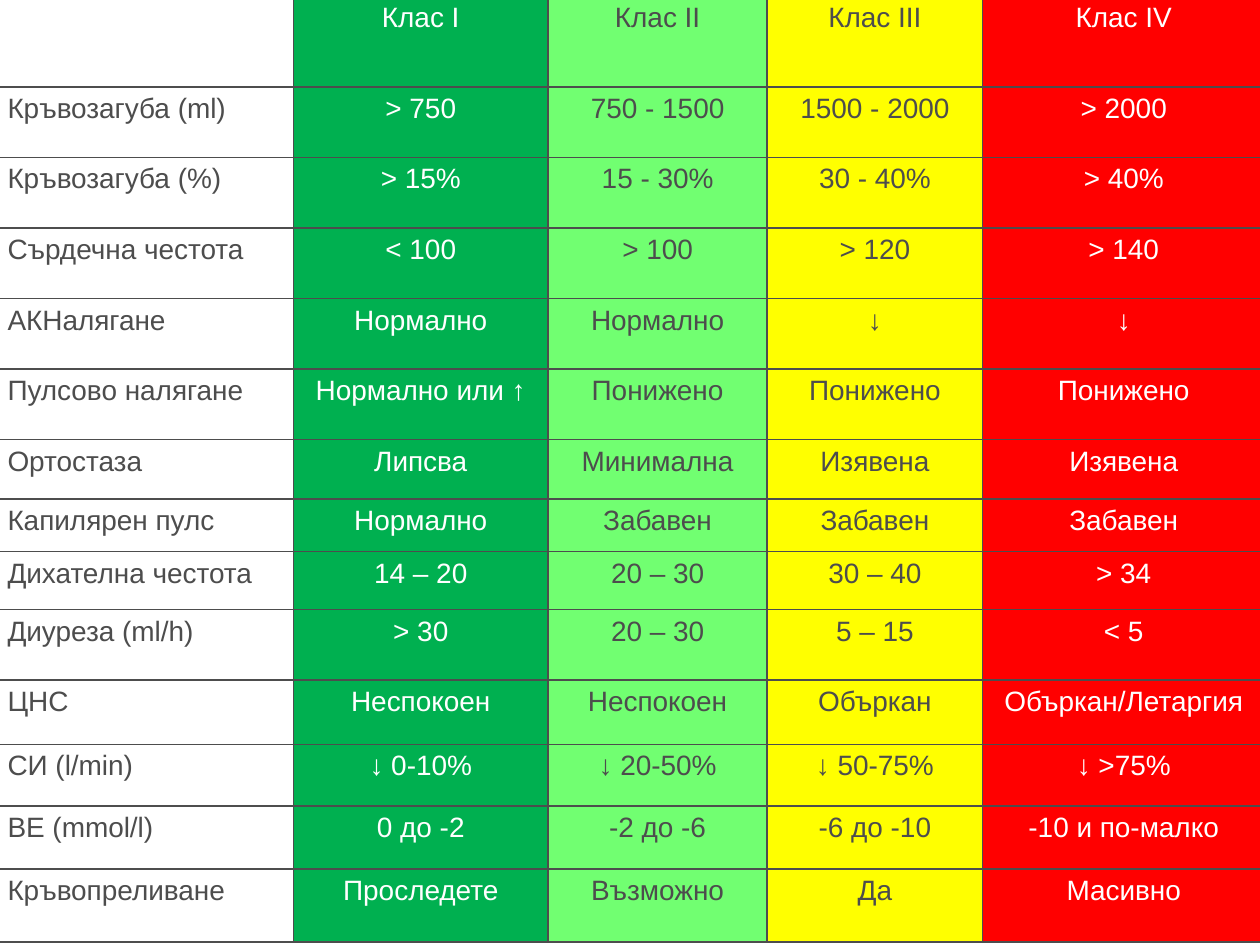
from lxml import etree
from pptx import Presentation
from pptx.dml.color import RGBColor
from pptx.enum import text
from pptx.oxml import ns
from pptx.util import Inches, Pt

GREY, WHITE = "4D4D4D", "FFFFFF"

# width, fill, font colour, alignment
COLUMNS = [
    (2.37, WHITE, GREY, text.PP_ALIGN.LEFT),
    (2.02, "00B050", WHITE, text.PP_ALIGN.CENTER),
    (1.74, "71FF71", GREY, text.PP_ALIGN.CENTER),
    (1.71, "FFFF00", GREY, text.PP_ALIGN.CENTER),
    (2.24, "FF0000", WHITE, text.PP_ALIGN.CENTER),
]

# height, then the indicator and its value in each class
ROWS = [
    (0.72, "", "Клас I", "Клас II", "Клас III", "Клас IV"),
    (0.56, "Кръвозагуба (ml)", "> 750", "750 - 1500", "1500 - 2000", "> 2000"),
    (0.56, "Кръвозагуба (%)", "> 15%", "15 - 30%", "30 - 40%", "> 40%"),
    (0.56, "Сърдечна честота", "< 100", "> 100", "> 120", "> 140"),
    (0.56, "АКНалягане", "Нормално", "Нормално", "↓", "↓"),
    (0.56, "Пулсово налягане", "Нормално или ↑", "Понижено", "Понижено", "Понижено"),
    (0.47, "Ортостаза", "Липсва", "Минимална", "Изявена", "Изявена"),
    (0.42, "Капилярен пулс", "Нормално", "Забавен", "Забавен", "Забавен"),
    (0.46, "Дихателна честота", "14 – 20", "20 – 30", "30 – 40", "> 34"),
    (0.56, "Диуреза (ml/h)", "> 30", "20 – 30", "5 – 15", "< 5"),
    (0.51, "ЦНС", "Неспокоен", "Неспокоен", "Объркан", "Объркан/Летаргия"),
    (0.49, "СИ (l/min)", "↓ 0-10%", "↓ 20-50%", "↓ 50-75%", "↓ >75%"),
    (0.5, "BE (mmol/l)", "0 до -2", "-2 до -6", "-6 до -10", "-10 и по-малко"),
    (0.58, "Кръвопреливане", "Проследете", "Възможно", "Да", "Масивно"),
]


def rgb(value):
    return RGBColor.from_string(value)


def add_borders(cell):
    """Line all four sides; call before the fill, which must follow in the XML."""
    properties = cell._tc.get_or_add_tcPr()
    for side in ("a:lnL", "a:lnR", "a:lnT", "a:lnB"):
        line = etree.SubElement(properties, ns.qn(side), w=str(Pt(1)))
        solid = etree.SubElement(line, ns.qn("a:solidFill"))
        etree.SubElement(solid, ns.qn("a:srgbClr"), val=GREY)


def fill_cell(cell, words, fill, colour, align):
    add_borders(cell)
    cell.fill.solid()
    cell.fill.fore_color.rgb = rgb(fill)
    cell.margin_left = cell.margin_right = Inches(0.1)
    cell.margin_top = cell.margin_bottom = Inches(0.05)
    if not words:
        return
    paragraph = cell.text_frame.paragraphs[0]
    paragraph.alignment = align
    run = paragraph.add_run()
    run.text = words
    run.font.name = "Arial"
    run.font.size = Pt(16)
    run.font.color.rgb = rgb(colour)


def main():
    deck = Presentation()
    deck.slide_width, deck.slide_height = Inches(10), Inches(7.5)
    slide = deck.slides.add_slide(deck.slide_layouts[6])

    width = sum(column[0] for column in COLUMNS)
    height = sum(row[0] for row in ROWS)
    classes = slide.shapes.add_table(
        len(ROWS), len(COLUMNS),
        Inches(-0.04), Inches(-0.03), Inches(width), Inches(height)).table
    classes.first_row = classes.horz_banding = False

    for column, (column_width, *_) in zip(classes.columns, COLUMNS):
        column.width = Inches(column_width)
    for r, (row_height, *values) in enumerate(ROWS):
        classes.rows[r].height = Inches(row_height)
        for c, (words, (_, *style)) in enumerate(zip(values, COLUMNS)):
            fill_cell(classes.cell(r, c), words, *style)

    deck.save("out.pptx")


if __name__ == "__main__":
    main()
